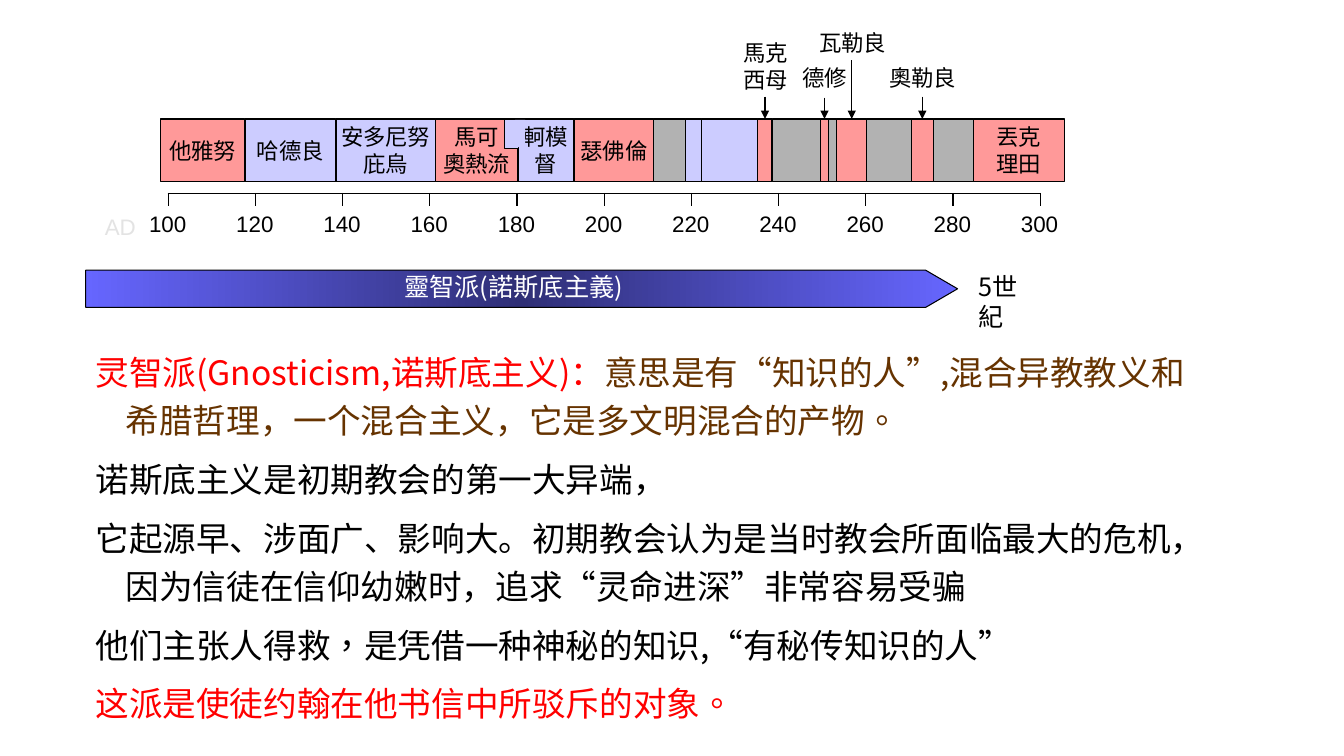
from dataclasses import dataclass
from copy import deepcopy
from typing import Optional, Sequence

from lxml import etree
from pptx import Presentation
from pptx.dml.color import RGBColor
from pptx.enum import dml, lang, shapes, text
from pptx.oxml import ns
from pptx.util import Pt

BLACK, WHITE, RED, BROWN = "000000", "FFFFFF", "FF0000", "663300"
PINK, LILAC, GREY = "FF9999", "CCCCFF", "B2B2B2"
NOTO = "Noto Sans CJK SC"
TRADITIONAL = lang.MSO_LANGUAGE_ID.TRADITIONAL_CHINESE
SIMPLIFIED = lang.MSO_LANGUAGE_ID.SIMPLIFIED_CHINESE
BAR_TOP, BAR_HEIGHT, BAR_LEFT = 85, 44.6, 114.5
DECADE_WIDTH = 62.3


@dataclass
class Run:
    words: str
    color: str = BLACK
    size: float = 16
    font: str = "Calibri"
    language: lang.MSO_LANGUAGE_ID = TRADITIONAL


@dataclass
class Caption:
    lines: Sequence[str]
    left: float
    top: float
    width: float
    arrow_top: float


@dataclass
class Reign:
    end: float
    color: str
    lines: Sequence[str] = ()
    caption: Optional[Caption] = None


REIGNS = [
    Reign(175, PINK, ["他雅努"]),
    Reign(240, LILAC, ["哈德良"]),
    Reign(311, LILAC, ["安多尼努", "庇烏"]),
    Reign(370, PINK, ["馬可", "奧熱流"]),
    Reign(409.7, LILAC, ["軻模", "督"]),
    Reign(410.4, GREY),
    Reign(466.6, PINK, ["瑟佛倫"]),
    Reign(489.6, GREY),
    Reign(501.1, LILAC),
    Reign(541.4, LILAC),
    Reign(551.5, PINK, caption=Caption(["馬克", "西母"], 522, 24.5, 49.7, 69.1)),
    Reign(586.1, GREY),
    Reign(591.8, PINK, caption=Caption(["德修"], 563.8, 42.5, 50.4, 69.8)),
    Reign(597.6, GREY),
    Reign(619.2, PINK, caption=Caption(["瓦勒良"], 573.8, 17.3, 70.6, 43.2)),
    Reign(650.9, GREY),
    Reign(666.7, PINK, caption=Caption(["奧勒良"], 627.8, 42.5, 62.6, 69.1)),
    Reign(695.5, GREY),
    Reign(760.3, PINK, ["丟克", "理田"]),
]

BODY = [
    [Run("灵智派(Gnosticism,诺斯底主义)：", RED, 24, NOTO),
     Run("意思是有“知识的人”,混合异教教义和希腊哲理，一个混合主义，它是多文明混合的产物", BROWN, 24, NOTO, SIMPLIFIED),
     Run("。", BROWN, 24, NOTO)],
    [Run("诺斯底主义是初期教会的第一大异端，", BLACK, 24, "Arial", SIMPLIFIED)],
    [Run("它起源早、涉面广、影响大。初期教会认为是当时教会所面临最大的危机，"
         "因为信徒在信仰幼嫩时，追求“灵命进深”非常容易受骗", BLACK, 24, "Arial", SIMPLIFIED)],
    [Run("他们主张人得救，是凭借一种神秘的知识,“有秘传知识的人”", BLACK, 24, NOTO)],
    [Run("这派是使徒约翰在他书信中所驳斥的对象。", RED, 24, NOTO)],
]


def rgb(value: str) -> RGBColor:
    return RGBColor.from_string(value)


def write(frame, paragraphs: Sequence[Sequence[Run]], spacing: float = 19.3,
          align=text.PP_ALIGN.CENTER, wrap: bool = True) -> None:
    """Fill a text frame run by run."""
    frame.word_wrap = wrap
    for index, runs in enumerate(paragraphs):
        paragraph = frame.add_paragraph() if index else frame.paragraphs[0]
        paragraph.alignment = align
        paragraph.line_spacing = Pt(spacing)
        for item in runs:
            run = paragraph.add_run()
            run.text = item.words
            font = run.font
            font.size, font.name, font.language_id = Pt(item.size), item.font, item.language
            font.color.rgb = rgb(item.color)
            east_asian = etree.Element(ns.qn("a:ea"), typeface=NOTO)
            font._element.find(ns.qn("a:latin")).addnext(east_asian)


def add_box(slide, left: float, top: float, width: float, height: float, color: str,
            outlined: bool = True, kind=shapes.MSO_SHAPE.RECTANGLE):
    shape = slide.shapes.add_shape(kind, Pt(left), Pt(top), Pt(width), Pt(height))
    shape.shadow.inherit = False
    shape.fill.solid()
    shape.fill.fore_color.rgb = rgb(color)
    if outlined:
        shape.line.color.rgb = rgb(BLACK)
        shape.line.width = Pt(0.75)
    else:
        shape.line.fill.background()
    return shape


def add_label(slide, left: float, top: float, width: float, height: float):
    return slide.shapes.add_textbox(Pt(left), Pt(top), Pt(width), Pt(height)).text_frame


def add_arrow(slide, top: float, target) -> None:
    middle = target.left + target.width // 2
    arrow = slide.shapes.add_connector(
        shapes.MSO_CONNECTOR.STRAIGHT, middle, Pt(top), middle, target.top)
    arrow.end_connect(target, 0)
    arrow.line.color.rgb = rgb(BLACK)
    arrow.line.width = Pt(0.75)
    etree.SubElement(arrow.line._get_or_add_ln(), ns.qn("a:tailEnd"), type="triangle")
    etree.SubElement(arrow._element.spPr, ns.qn("a:effectLst"))


def set_borders(cell, colors: dict) -> None:
    """Draw the named sides one point wide and hide the others."""
    properties = cell._tc.get_or_add_tcPr()
    for side in "LRTB":
        line = etree.SubElement(properties, ns.qn(f"a:ln{side}"), w=str(Pt(1)))
        if side in colors:
            fill = etree.SubElement(line, ns.qn("a:solidFill"))
            etree.SubElement(fill, ns.qn("a:srgbClr"), val=colors[side])
        else:
            etree.SubElement(line, ns.qn("a:noFill"))


def add_row(slide, left: float, top: float, height: float, count: int, borders: dict):
    """Add a one-row table of equal columns and return its cells."""
    table = slide.shapes.add_table(
        1, count, Pt(left), Pt(top), Pt(DECADE_WIDTH * count), Pt(height)).table
    table.first_row = table.horz_banding = False
    table.rows[0].height = Pt(height)
    for column in table.columns:
        column.width = Pt(DECADE_WIDTH)
    cells = [table.cell(0, index) for index in range(count)]
    for cell in cells:
        set_borders(cell, borders)
    return cells


def add_timeline(slide) -> None:
    # Ticks, with the year labels covering their lower part
    for cell in add_row(slide, 120.2, 138.2, 28.8, 10, dict.fromkeys("LRTB", BLACK)):
        cell.fill.background()
    years = add_row(slide, 88.6, 147.6, 26.6, 11, {"T": WHITE, "B": WHITE})
    for index, cell in enumerate(years):
        cell.fill.solid()
        cell.fill.fore_color.rgb = rgb(WHITE)
        write(cell.text_frame, [[Run(str(100 + 20 * index), font="Arial")]], 18.4)
    write(add_label(slide, 67.8, 149.2, 40, 26), [[Run("AD", "E3E3E3", font="Arial")]],
          18.4, text.PP_ALIGN.LEFT)


def add_reigns(slide) -> None:
    left = BAR_LEFT
    for reign in REIGNS:
        box = add_box(slide, left, BAR_TOP, reign.end - left, BAR_HEIGHT, reign.color)
        left = reign.end
        if reign.lines:
            box.text_frame.vertical_anchor = text.MSO_ANCHOR.MIDDLE
            write(box.text_frame, [[Run(line)] for line in reign.lines], wrap=False)
        if reign.caption:
            caption = reign.caption
            frame = add_label(slide, caption.left, caption.top, caption.width,
                              7.2 + 19.3 * len(caption.lines))
            write(frame, [[Run(line)] for line in caption.lines])
            add_arrow(slide, caption.arrow_top, box)
    # Shared rule: a notch that opens into the next reign
    add_box(slide, 360.7, BAR_TOP, 9.4, 20.9, LILAC)
    add_box(slide, 367.9, 85.7, 7.2, 19.4, LILAC, outlined=False)


def add_movement(slide) -> None:
    bar = add_box(slide, 61.2, 193, 622.8, 26.6, "6666FF", kind=shapes.MSO_SHAPE.PENTAGON)
    bar.adjustments[0] = 0.859
    bar.fill.gradient()
    bar.fill.gradient_angle = 0
    for stop in bar.fill.gradient_stops:
        stop.color.rgb = rgb("6666FF")
    first = bar._element.spPr.find(".//" + ns.qn("a:gs"))
    middle = deepcopy(first)
    middle.set("pos", "50000")
    middle.find(ns.qn("a:srgbClr")).set("val", "2F2F76")
    first.addnext(middle)
    bar.text_frame.vertical_anchor = text.MSO_ANCHOR.TOP
    write(bar.text_frame, [[Run("靈智派(諾斯底主義)", WHITE, 18, NOTO)]], 19, wrap=False)
    write(add_label(slide, 691.9, 190.5, 59.8, 50), [[Run("5世紀", BLACK, 18, NOTO)]],
          21.4, text.PP_ALIGN.LEFT)


def add_body(slide) -> None:
    frame = add_label(slide, 61.2, 242, 810.7, 281.5)
    write(frame, BODY, 34.6, text.PP_ALIGN.LEFT)
    for paragraph in frame.paragraphs:
        paragraph.space_after = Pt(7.2)
        properties = paragraph._p.get_or_add_pPr()
        properties.set("marL", str(Pt(21.6)))
        properties.set("indent", str(Pt(-21.6)))


def main() -> None:
    presentation = Presentation()
    presentation.slide_width, presentation.slide_height = Pt(960), Pt(540)
    slide = presentation.slides.add_slide(presentation.slide_layouts[6])
    add_timeline(slide)
    add_reigns(slide)
    add_movement(slide)
    add_body(slide)
    presentation.save("out.pptx")


if __name__ == "__main__":
    main()
